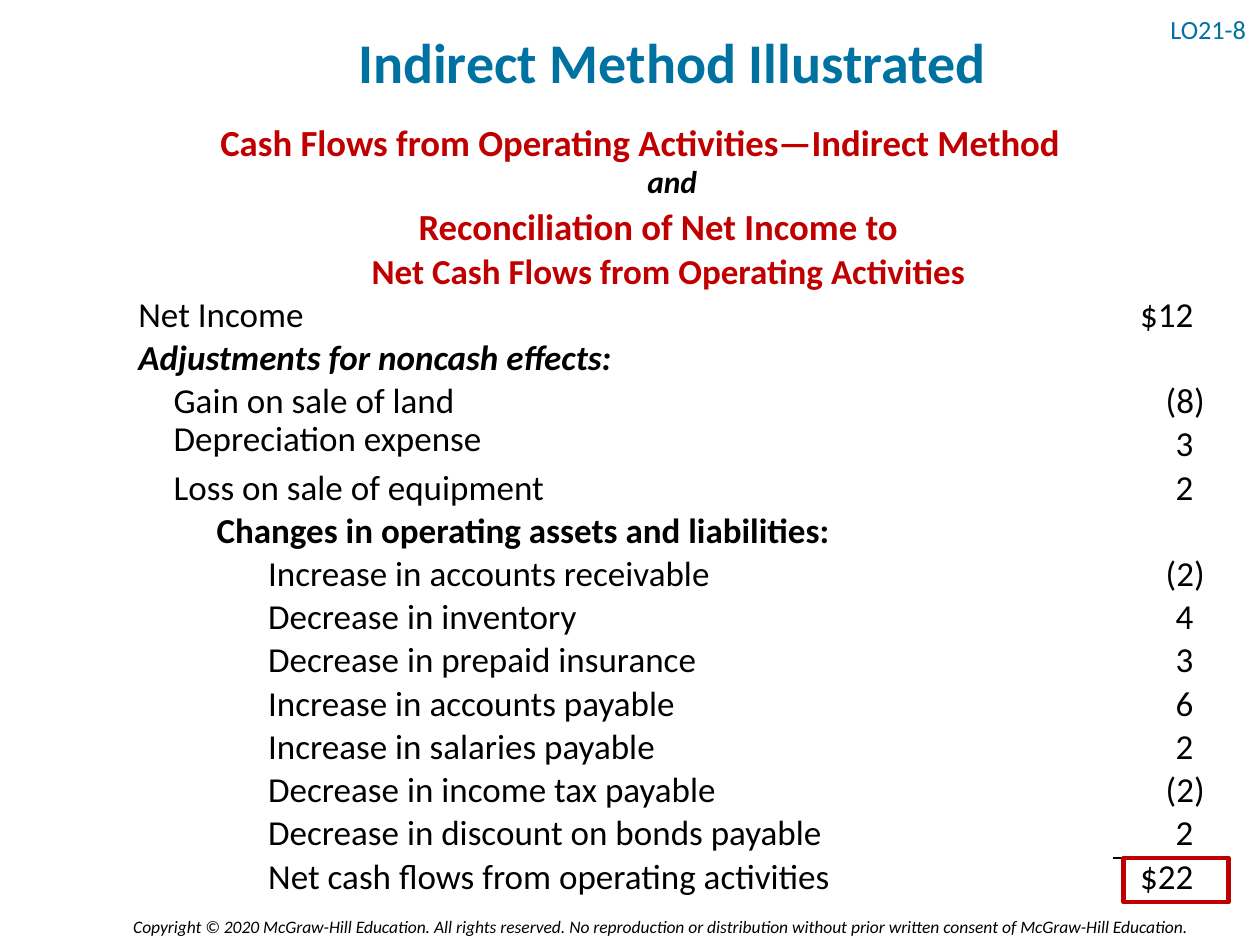
from pptx import Presentation
from pptx.dml.color import RGBColor
from pptx.enum.shapes import MSO_CONNECTOR, MSO_SHAPE
from pptx.enum.text import MSO_ANCHOR, PP_ALIGN
from pptx.oxml.ns import qn
from pptx.util import Inches, Pt
from lxml.etree import SubElement

COLORS = {"blue": "0072A2", "red": "C00000", "black": "000000"}
LEFT, CENTER, RIGHT = PP_ALIGN.LEFT, PP_ALIGN.CENTER, PP_ALIGN.RIGHT

# Statement grid: row pitch, indent columns and amount column, in inches
TOP, PITCH, HIGH = 2.27, 0.343, 0.44
INDENT = [1, 1.28, 1.62, 2.03]
LABEL_W = 6.05
SUM_X, SUM_W = 8.83, 0.74
HANG = 0.09  # closing brackets hang right of the digits

# Label, indent level, amount, font format
ROWS = [
    ("Net Income", 0, "$12", {}),
    ("Adjustments for noncash effects:", 0, "", {"bold": True, "italic": True}),
    ("Gain on sale of land", 1, "(8)", {}),
    ("Depreciation expense", 1, "3", {}),
    ("Loss on sale of equipment", 1, "2", {}),
    ("Changes in operating assets and liabilities:", 2, "", {"bold": True}),
    ("Increase in accounts receivable", 3, "(2)", {}),
    ("Decrease in inventory", 3, "4", {}),
    ("Decrease in prepaid insurance", 3, "3", {}),
    ("Increase in accounts payable", 3, "6", {}),
    ("Increase in salaries payable", 3, "2", {}),
    ("Decrease in income tax payable", 3, "(2)", {}),
    ("Decrease in discount on bonds payable", 3, "2", {}),
    ("Net cash flows from operating activities", 3, "$22", {}),
]
LIFT = {"Depreciation expense": 0.04}  # label set a little above its row

# Text, box, size, color, italic, alignment
HEADS = [
    ("Cash Flows from Operating Activities—Indirect Method",
     (1.65, 0.9, 7.32, 0.47), 21, "red", False, LEFT),
    ("and", (0.67, 1.24, 9.33, 0.4), 18, "black", True, CENTER),
    ("Reconciliation of Net Income to",
     (2.16, 1.57, 6.13, 0.45), 21, "red", False, CENTER),
    ("Net Cash Flows from Operating Activities",
     (2.28, 1.93, 6.05, 0.44), 20, "red", False, CENTER),
]


def rgb(name):
    return RGBColor.from_string(COLORS[name])


def put_text(slide, text, box, shape=None, size=20, color="black", bold=False,
             italic=False, align=LEFT, anchor=MSO_ANCHOR.TOP, space=None):
    area = [Inches(v) for v in box]
    if shape is None:
        shape = slide.shapes.add_textbox(*area)
    shape.left, shape.top, shape.width, shape.height = area
    frame = shape.text_frame
    frame.word_wrap = True
    frame.vertical_anchor = anchor
    frame.text = text
    para = frame.paragraphs[0]
    para.alignment = align
    if space:
        para.line_spacing = space
    font = para.runs[0].font
    font.name, font.size = "Calibri", Pt(size)
    font.bold, font.italic = bold, italic
    font.color.rgb = rgb(color)


def add_row(slide, num, label, level, amount, style):
    y = TOP + num * PITCH
    put_text(slide, label,
             (INDENT[level], y - LIFT.get(label, 0), LABEL_W, HIGH), **style)
    if amount:
        x = SUM_X + (HANG if amount.endswith(")") else 0)
        put_text(slide, amount, (x, y, SUM_W, HIGH), align=RIGHT)


def add_rule(slide, x, y, width):
    rule = slide.shapes.add_connector(
        MSO_CONNECTOR.STRAIGHT, *[Inches(v) for v in (x, y, x + width, y)])
    rule.line.color.rgb = rgb("black")
    rule.line.width = Pt(1)
    SubElement(rule._element.spPr, qn("a:effectLst"))


def add_frame(slide, box):
    frame = slide.shapes.add_shape(
        MSO_SHAPE.ROUNDED_RECTANGLE, *[Inches(v) for v in box])
    frame.adjustments[0] = 0
    frame.shadow.inherit = False
    frame.fill.background()
    frame.line.color.rgb = rgb("red")
    frame.line.width = Pt(2.75)


def main():
    deck = Presentation()
    deck.slide_width, deck.slide_height = Inches(10), Inches(7.5)
    slide = deck.slides.add_slide(deck.slide_layouts[5])

    # Title, objective tag and footer
    put_text(slide, "Indirect Method Illustrated", (0.67, 0, 9.33, 0.92),
             shape=slide.shapes.title, size=32, color="blue", bold=True,
             align=CENTER, anchor=MSO_ANCHOR.MIDDLE, space=1.1)
    put_text(slide, "LO21-8", (9.19, 0.05, 0.81, 0.4), size=15, color="blue",
             anchor=MSO_ANCHOR.MIDDLE, space=0.9)
    put_text(slide, "Copyright © 2020 McGraw-Hill Education. All rights reserved. "
             "No reproduction or distribution without prior written consent of "
             "McGraw-Hill Education.", (0.45, 7.22, 9.07, 0.27),
             size=10, italic=True, align=RIGHT)

    # Statement headings
    for text, box, size, color, italic, align in HEADS:
        put_text(slide, text, box, size=size, color=color, bold=True,
                 italic=italic, align=align)

    # Statement rows
    for num, row in enumerate(ROWS):
        add_row(slide, num, *row)

    # Rule and frame around the total
    total = TOP + (len(ROWS) - 1) * PITCH + 0.08
    add_rule(slide, SUM_X, total, 0.75)
    add_frame(slide, (SUM_X + HANG, total, 0.83, 0.35))

    deck.save("out.pptx")


if __name__ == "__main__":
    main()
